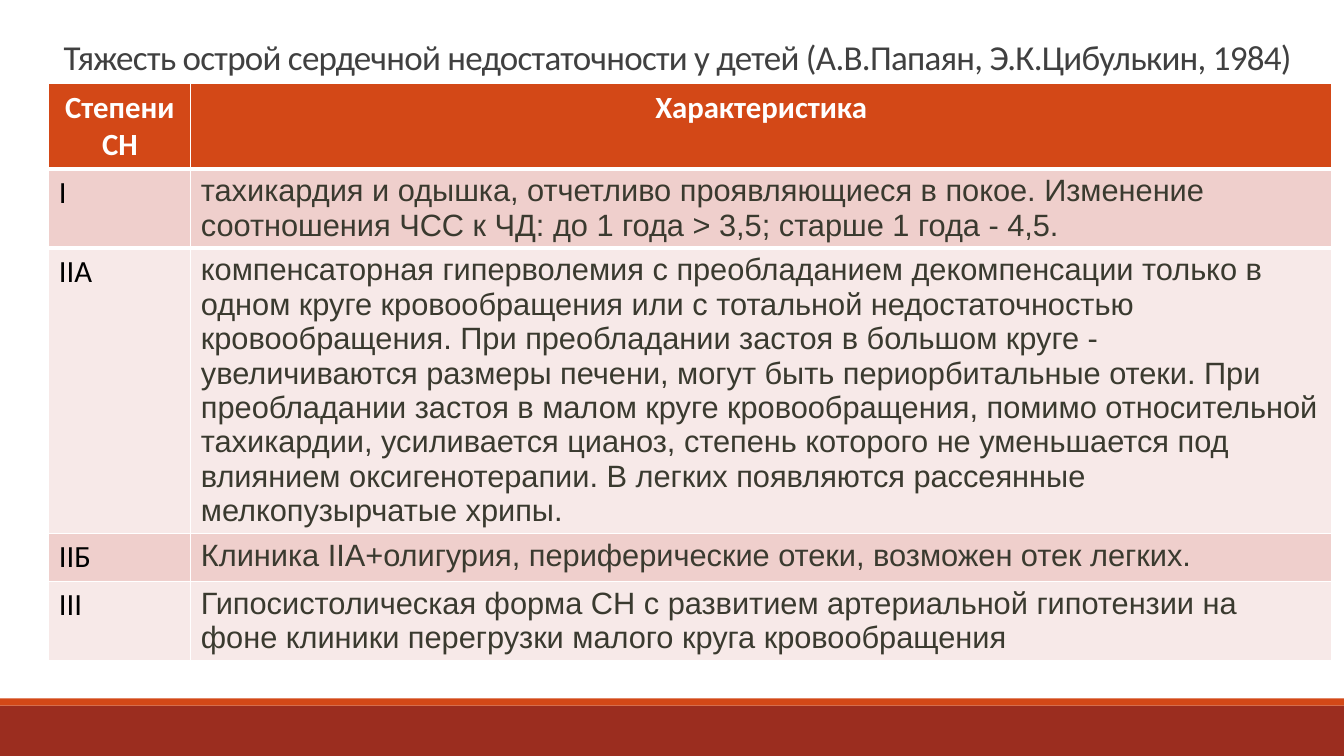
import lxml.etree
import pptx
import pptx.dml.color
import pptx.enum.shapes
import pptx.enum.text
import pptx.oxml.ns
import pptx.util

Cm = pptx.util.Cm
Pt = pptx.util.Pt
RGB = pptx.dml.color.RGBColor.from_string
ALIGN = pptx.enum.text.PP_ALIGN
qn = pptx.oxml.ns.qn

THEME = {
    "title": RGB("404040"),
    "header": RGB("D34817"),
    "header_text": RGB("FFFFFF"),
    "bands": [RGB("EFCFCC"), RGB("F7E9E8")],
    "degree": RGB("000000"),
    "body": RGB("3A3A2F"),
    "footer": RGB("9B2D1F"),
    "rule": RGB("FFFFFF"),
    "title_size": Pt(25),
    "table_size": Pt(22),
    "head_font": "Calibri",
    "body_font": "Arial",
}

ROWS = [
    ("Степени СН", "Характеристика"),
    ("I", "тахикардия и одышка, отчетливо проявляющиеся в покое. Изменение "
          "соотношения ЧСС к ЧД: до 1 года > 3,5; старше 1 года - 4,5."),
    ("IIА", "компенсаторная гиперволемия с преобладанием декомпенсации только в "
            "одном круге кровообращения или с тотальной недостаточностью "
            "кровообращения. При преобладании застоя в большом круге - "
            "увеличиваются размеры печени, могут быть периорбитальные отеки. При "
            "преобладании застоя в малом круге кровообращения, помимо относительной "
            "тахикардии, усиливается цианоз, степень которого не уменьшается под "
            "влиянием оксигенотерапии. В легких появляются рассеянные "
            "мелкопузырчатые хрипы."),
    ("IIБ", "Клиника IIA+олигурия, периферические отеки, возможен отек легких."),
    ("III", "Гипосистолическая форма СН с развитием артериальной гипотензии на "
            "фоне клиники перегрузки малого круга кровообращения"),
]
ROW_HEIGHTS = [2.13, 1.98, 7.2, 1.18, 1.98]
COL_WIDTHS = [3.58, 28.75]


def style_run(r, font, size, color, bold=False):
    r.font.name = font
    r.font.size = size
    r.font.color.rgb = color
    r.font.bold = bold


def add_border(cell, side, width, color):
    ln = lxml.etree.Element(qn("a:" + side), w=str(width))
    fill = lxml.etree.SubElement(ln, qn("a:solidFill"))
    lxml.etree.SubElement(fill, qn("a:srgbClr"), val=str(color))
    cell._tc.get_or_add_tcPr().insert(0, ln)


prs = pptx.Presentation()
prs.slide_width = Cm(33.87)
prs.slide_height = Cm(19.05)
s = prs.slides.add_slide(prs.slide_layouts[5])

for top, height, color in [(17.78, 1.27, "footer"), (17.6, 0.18, "header")]:
    sp = s.shapes.add_shape(pptx.enum.shapes.MSO_SHAPE.RECTANGLE,
                            0, Cm(top), prs.slide_width, Cm(height))
    sp.shadow.inherit = False
    sp.fill.solid()
    sp.fill.fore_color.rgb = THEME[color]
    sp.line.fill.background()

title = s.shapes.title
title.left, title.top, title.width, title.height = Cm(0.91), Cm(0.56), Cm(32.33), Cm(1.52)
tf = title.text_frame
tf.text = "Тяжесть острой сердечной недостаточности у детей (А.В.Папаян, Э.К.Цибулькин, 1984)"
tf.word_wrap = True
tf.auto_size = pptx.enum.text.MSO_AUTO_SIZE.NONE
tf.vertical_anchor = pptx.enum.text.MSO_ANCHOR.BOTTOM
p = tf.paragraphs[0]
p.alignment = ALIGN.CENTER
p.line_spacing = 0.85
r = p.runs[0]
style_run(r, THEME["head_font"], THEME["title_size"], THEME["title"])
r.font._element.set("spc", "-50")

table = s.shapes.add_table(len(ROWS), len(COL_WIDTHS), Cm(1.23), Cm(2.11),
                           Cm(sum(COL_WIDTHS)), Cm(sum(ROW_HEIGHTS))).table
for column, width in zip(table.columns, COL_WIDTHS):
    column.width = Cm(width)

for i, texts in enumerate(ROWS):
    table.rows[i].height = Cm(ROW_HEIGHTS[i])
    for j, text in enumerate(texts):
        cell = table.cell(i, j)
        cell.fill.solid()
        cell.fill.fore_color.rgb = THEME["bands"][(i - 1) % 2] if i else THEME["header"]
        if i < 2:
            add_border(cell, ("lnB", "lnT")[i], Pt(3), THEME["rule"])
        cell.text_frame.text = text
        p = cell.text_frame.paragraphs[0]
        p.alignment = ALIGN.LEFT if i else ALIGN.CENTER
        font = THEME["body_font"] if i and j else THEME["head_font"]
        color = THEME[("degree", "body")[j] if i else "header_text"]
        style_run(p.runs[0], font, THEME["table_size"], color, bold=i == 0)

prs.save("out.pptx")
